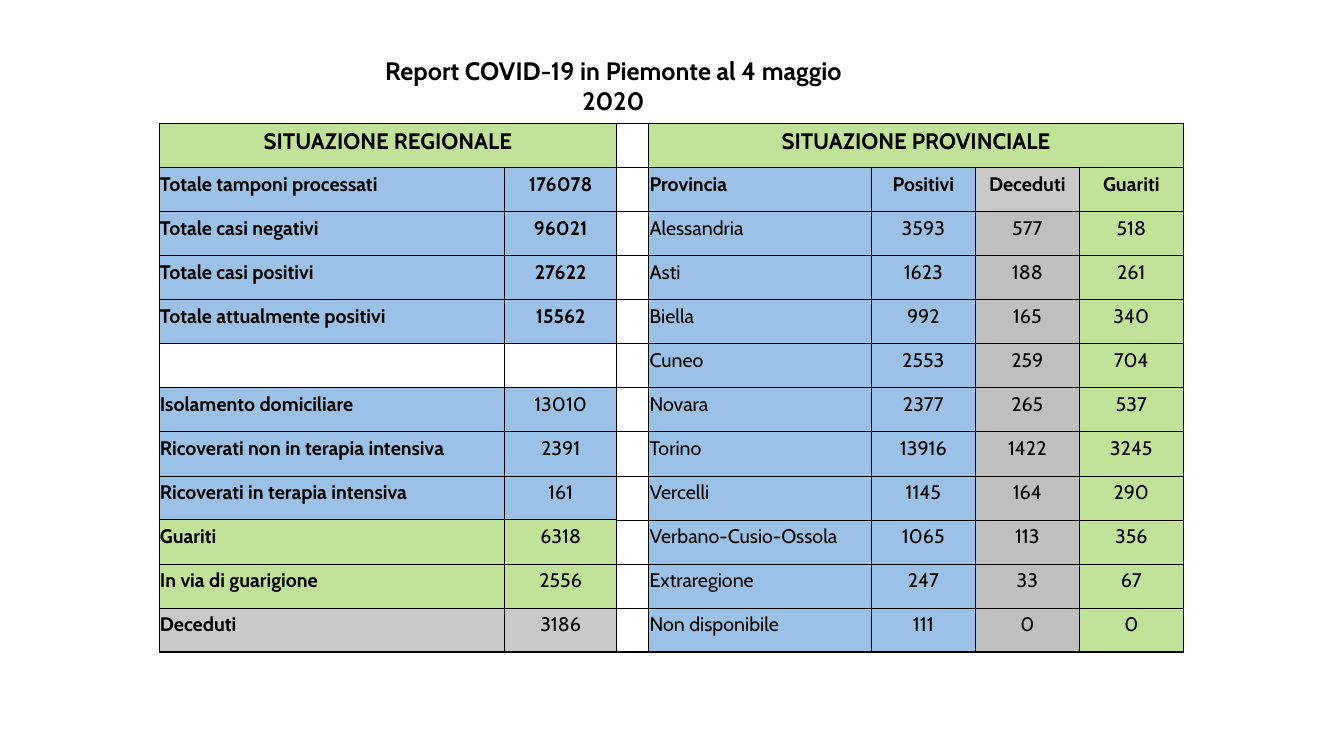
from lxml.etree import SubElement
from pptx import Presentation
from pptx.dml.color import RGBColor
from pptx.enum.text import PP_ALIGN
from pptx.oxml.ns import qn
from pptx.util import Cm, Pt

TITLE = "Report COVID-19 in Piemonte al 4 maggio 2020"
HEADINGS = {0: "SITUAZIONE REGIONALE", 3: "SITUAZIONE PROVINCIALE"}

# Label, value, fill, bold value
REGION = [
    ("Totale tamponi processati", "176078", "blue", True),
    ("Totale casi negativi", "96021", "blue", True),
    ("Totale casi positivi", "27622", "blue", True),
    ("Totale attualmente positivi", "15562", "blue", True),
    ("", "", "white", False),
    ("Isolamento domiciliare", "13010", "blue", False),
    ("Ricoverati non in terapia intensiva", "2391", "blue", False),
    ("Ricoverati in terapia intensiva", "161", "blue", False),
    ("Guariti", "6318", "green", False),
    ("In via di guarigione", "2556", "green", False),
    ("Deceduti", "3186", "light_grey", False),
]
PROVINCES = [
    ("Provincia", "Positivi", "Deceduti", "Guariti"),
    ("Alessandria", "3593", "577", "518"),
    ("Asti", "1623", "188", "261"),
    ("Biella", "992", "165", "340"),
    ("Cuneo", "2553", "259", "704"),
    ("Novara", "2377", "265", "537"),
    ("Torino", "13916", "1422", "3245"),
    ("Vercelli", "1145", "164", "290"),
    ("Verbano-Cusio-Ossola", "1065", "113", "356"),
    ("Extraregione", "247", "33", "67"),
    ("Non disponibile", "111", "0", "0"),
]
PROVINCE_FILLS = ("blue", "blue", "grey", "green")

# Rows that begin and end a block, where the rule is thicker
REGION_STARTS, REGION_ENDS = {0, 1, 5, 6, 9}, {0, 4, 5, 8, 11}
PROVINCE_STARTS, PROVINCE_ENDS = {0, 1, 2}, {0, 1, 11}

COLORS = {"black": "000000", "white": "FFFFFF", "blue": "9BC2E6",
          "green": "C0E399", "grey": "BFBFBF", "light_grey": "C9C9C9"}
FONT = "Cabin"
THICK, THIN = 0.96, 0.5
COL_WIDTHS = (8.71, 2.82, 0.81, 5.61, 2.62, 2.62, 2.62)
ROW_HEIGHT = 1.11
GAP_COL = 2
NO_STYLE = "{2D5ABB26-0587-4C30-8999-92F81FD0307C}"


def color(name):
    return RGBColor.from_string(COLORS[name])


def write(tf, text, size, bold, align):
    p = tf.paragraphs[0]
    p.text = text
    p.alignment = align
    for r in p.runs:
        r.font.name = FONT
        r.font.size = Pt(size)
        r.font.bold = bold
        r.font.color.rgb = color("black")


def fill_cell(cell, text, fill, size=14, bold=False, align=PP_ALIGN.CENTER):
    cell.fill.solid()
    cell.fill.fore_color.rgb = color(fill)
    cell.margin_left = cell.margin_right = Cm(0.02)
    write(cell.text_frame, text, size, bold, align)


def set_borders(cell, top, bottom):
    tc_pr = cell._tc.get_or_add_tcPr()
    sides = (("a:lnL", THICK), ("a:lnR", THICK), ("a:lnT", top), ("a:lnB", bottom))
    for i, (tag, width) in enumerate(sides):
        ln = SubElement(tc_pr, qn(tag), w=str(Pt(width)))
        solid = SubElement(ln, qn("a:solidFill"))
        SubElement(solid, qn("a:srgbClr"), val=COLORS["black"])
        tc_pr.insert(i, ln)


prs = Presentation()
prs.slide_width, prs.slide_height = Cm(33.87), Cm(19.05)
s = prs.slides.add_slide(prs.slide_layouts[6])

# Title
box = s.shapes.add_textbox(Cm(8.79), Cm(1.27), Cm(13.34), Cm(1.02))
box.text_frame.word_wrap = True
write(box.text_frame, TITLE, 18, True, PP_ALIGN.CENTER)

# Table grid
n_rows = len(REGION) + 1
frame = s.shapes.add_table(n_rows, len(COL_WIDTHS), Cm(4.01), Cm(3.11),
                           Cm(sum(COL_WIDTHS)), Cm(ROW_HEIGHT * n_rows))
table = frame.table
table.first_row = table.horz_banding = False
table._tbl.tblPr.find(qn("a:tableStyleId")).text = NO_STYLE
for column, width in zip(table.columns, COL_WIDTHS):
    column.width = Cm(width)
for row in table.rows:
    row.height = Cm(ROW_HEIGHT)

# Headings
table.cell(0, 0).merge(table.cell(0, 1))
table.cell(0, 3).merge(table.cell(0, 6))
for col, heading in HEADINGS.items():
    fill_cell(table.cell(0, col), heading, "green", 16, True)

# Regional and provincial figures
for row, (region, province) in enumerate(zip(REGION, PROVINCES), start=1):
    label, value, fill, bold = region
    fill_cell(table.cell(row, 0), label, fill, bold=True, align=PP_ALIGN.LEFT)
    fill_cell(table.cell(row, 1), value, fill, bold=bold)
    for i, (text, fill) in enumerate(zip(province, PROVINCE_FILLS)):
        header = row == 1
        fill_cell(table.cell(row, GAP_COL + 1 + i), text,
                  "light_grey" if header and fill == "grey" else fill, bold=header,
                  align=PP_ALIGN.CENTER if i else PP_ALIGN.LEFT)

# Cell borders
for row in range(n_rows):
    for col in range(len(COL_WIDTHS)):
        starts, ends = ((REGION_STARTS, REGION_ENDS) if col < GAP_COL
                        else (PROVINCE_STARTS, PROVINCE_ENDS))
        set_borders(table.cell(row, col),
                    THICK if row in starts else THIN,
                    THICK if row in ends else THIN)

prs.save("out.pptx")
